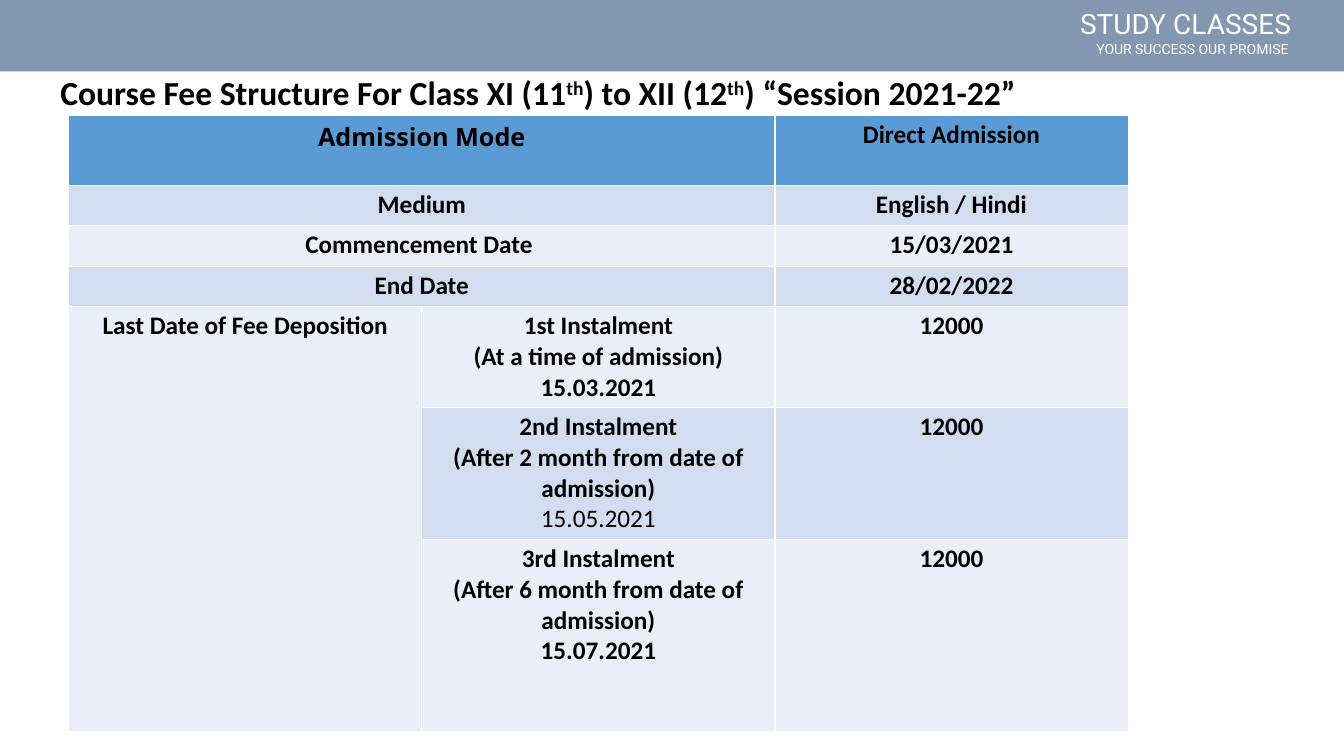
from dataclasses import dataclass

from pptx import Presentation
from pptx.dml.color import RGBColor
from pptx.enum.shapes import MSO_SHAPE as Preset
from pptx.enum.text import MSO_AUTO_SIZE as AutoSize, PP_ALIGN as Align
from pptx.util import Cm, Pt


@dataclass(frozen=True)
class Theme:
    """Colours, fonts and type sizes of the slide."""
    banner: str = "8497B0"
    header: str = "5B9BD5"
    bands: tuple = ("EAEFF7", "D2DEEF")
    light: str = "FFFFFF"
    dark: str = "000000"
    body_font: str = "Calibri"
    header_font: str = "Open Sans"
    banner_font: str = "Roboto"
    title_size: int = 24
    name_size: int = 20
    table_size: int = 18
    motto_size: int = 10


class FeeSlide:
    """Draws styled elements on one slide."""

    def __init__(self, slide, theme):
        self.slide = slide
        self.theme = theme

    def style_run(self, run, font_name, size, color, bold=False):
        """Set the font of one run."""
        font = run.font
        font.name = font_name
        font.size = Pt(size)
        font.bold = bold
        font.color.rgb = RGBColor.from_string(color)

    def banner(self, width, height):
        """Draw the plain band along the top edge."""
        shape = self.slide.shapes.add_shape(Preset.RECTANGLE, 0, 0, Cm(width), Cm(height))
        shape.shadow.inherit = False
        shape.fill.solid()
        shape.fill.fore_color.rgb = RGBColor.from_string(self.theme.banner)
        shape.line.fill.background()

    def text(self, box, parts, font_name, size, color, bold=False):
        """Add one line of text whose every second part is superscript."""
        shape = self.slide.shapes.add_textbox(*map(Cm, box))
        text_frame = shape.text_frame
        text_frame.word_wrap = True
        text_frame.auto_size = AutoSize.SHAPE_TO_FIT_TEXT
        paragraph = text_frame.paragraphs[0]
        for index, part in enumerate(parts):
            run = paragraph.add_run()
            run.text = part
            self.style_run(run, font_name, size, color, bold)
            if index % 2:
                run._r.get_or_add_rPr().set("baseline", "30000")

    def cell(self, cell, text, fill, font_name, light_lines):
        """Fill one cell and centre its text."""
        cell.fill.solid()
        cell.fill.fore_color.rgb = RGBColor.from_string(fill)
        cell.margin_top = cell.margin_bottom = Cm(0.1)
        cell.text_frame.text = text
        for paragraph in cell.text_frame.paragraphs:
            paragraph.alignment = Align.CENTER
            for run in paragraph.runs:
                bold = run.text not in light_lines
                self.style_run(run, font_name, self.theme.table_size, self.theme.dark, bold)

    def table(self, left, top, column_width, row_heights, rows, merges, light_lines):
        """Add the banded fee table."""
        column_count = len(rows[0])
        frame = self.slide.shapes.add_table(
            len(rows), column_count, Cm(left), Cm(top),
            Cm(column_width * column_count), Cm(sum(row_heights)))
        table = frame.table
        for column in table.columns:
            column.width = Cm(column_width)
        for row_index, (height, texts) in enumerate(zip(row_heights, rows)):
            table.rows[row_index].height = Cm(height)
            fill = self.theme.bands[row_index % 2] if row_index else self.theme.header
            for column_index, text in enumerate(texts):
                is_corner = row_index == column_index == 0
                font_name = self.theme.header_font if is_corner else self.theme.body_font
                self.cell(table.cell(row_index, column_index), text, fill, font_name, light_lines)
        for first, last in merges:
            table.cell(*first).merge(table.cell(*last))


FEE = "12000"
ROWS = [
    ("Admission Mode", "", "Direct Admission"),
    ("Medium", "", "English / Hindi"),
    ("Commencement Date ", "", "15/03/2021"),
    ("End Date", "", "28/02/2022"),
    ("Last Date of Fee Deposition", "1st Instalment\n(At a time of admission)\n15.03.2021", FEE),
    ("", "2nd Instalment\n(After 2 month from date of admission)\n15.05.2021", FEE),
    ("", "3rd Instalment\n(After 6 month from date of admission)\n15.07.2021", FEE),
]
ROW_HEIGHTS = [1.76, 1.02, 1.02, 1.02, 2.54, 3.33, 4.83]
MERGES = [((row, 0), (row, 1)) for row in range(4)] + [((4, 0), (6, 0))]
TITLE = ["Course Fee Structure For Class XI (11", "th", ") to XII (12", "th", ") “Session 2021-22”"]


def main():
    """Build and save the fee slide."""
    presentation = Presentation()
    presentation.slide_width = Cm(33.87)
    presentation.slide_height = Cm(19.05)
    theme = Theme()
    page = FeeSlide(presentation.slides.add_slide(presentation.slide_layouts[6]), theme)
    page.banner(33.87, 1.8)
    page.text((26.97, 0.05, 7.82, 1.12), ["STUDY CLASSES"],
              theme.banner_font, theme.name_size, theme.light)
    page.text((27.38, 0.89, 7.01, 0.69), ["YOUR SUCCESS OUR PROMISE"],
              theme.banner_font, theme.motto_size, theme.light)
    page.text((1.27, 1.68, 24.71, 1.27), TITLE,
              theme.body_font, theme.title_size, theme.dark, bold=True)
    page.table(1.73, 2.91, 8.9, ROW_HEIGHTS, ROWS, MERGES, light_lines={"15.05.2021"})
    presentation.save("out.pptx")


if __name__ == "__main__":
    main()
